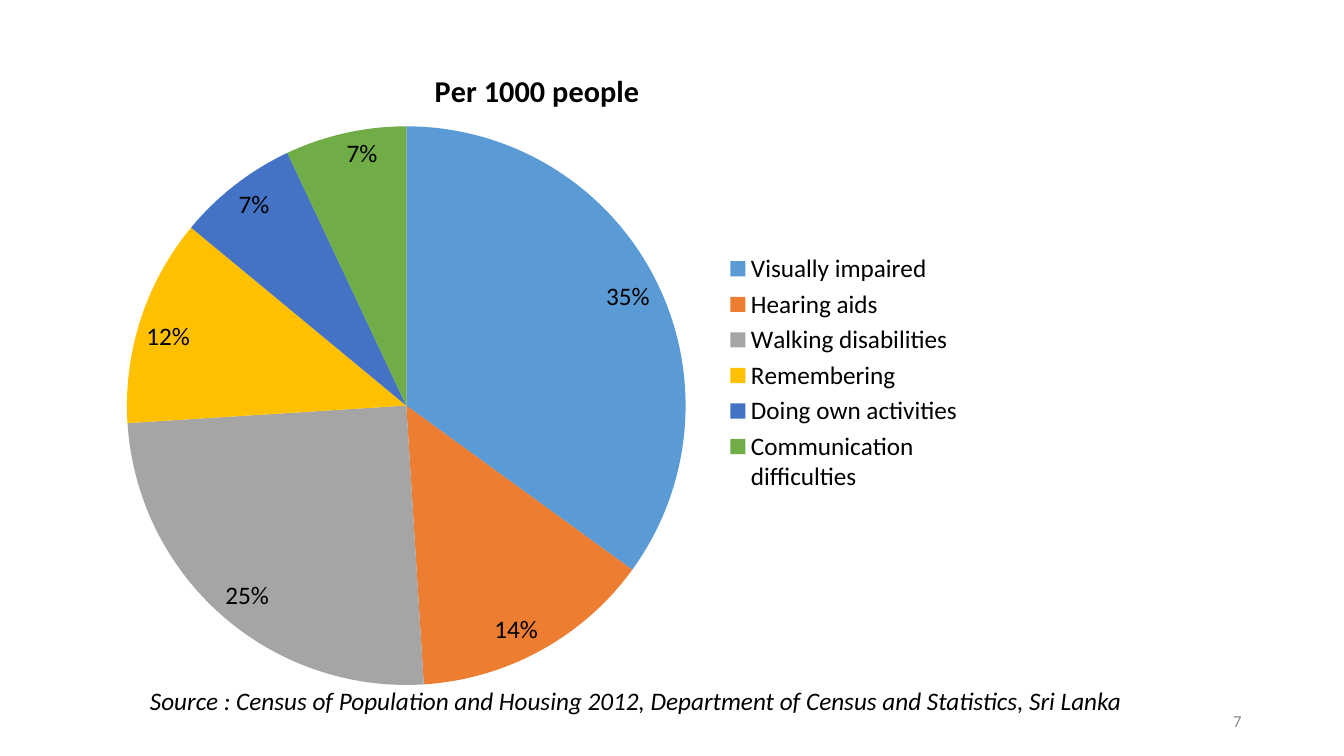
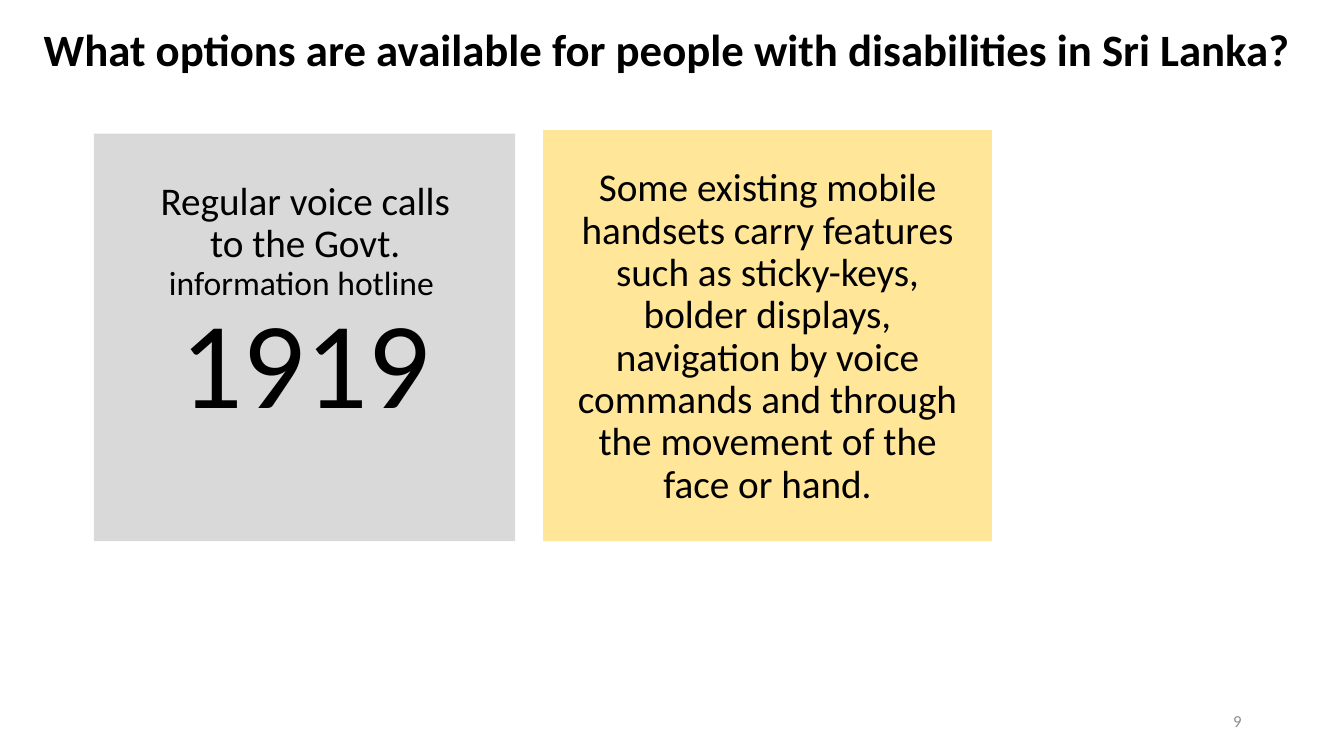
"""Builds two slides on disabilities and support options in Sri Lanka."""
from dataclasses import dataclass

from lxml import etree
from pptx import Presentation
from pptx.chart.data import CategoryChartData
from pptx.dml.color import RGBColor
from pptx.enum import chart as charts, shapes, text
from pptx.oxml import ns
from pptx.util import Pt

FONT = "Calibri"
BLACK = RGBColor(0x00, 0x00, 0x00)
NUMBER_GREY = RGBColor(0x8C, 0x8C, 0x8C)
PANEL_YELLOW = RGBColor(0xFF, 0xE6, 0x99)
PANEL_GREY = RGBColor(0xD9, 0xD9, 0xD9)
LEFT, CENTER, RIGHT = text.PP_ALIGN.LEFT, text.PP_ALIGN.CENTER, text.PP_ALIGN.RIGHT


@dataclass(frozen=True)
class Box:
    """Position and size in points."""
    left: float
    top: float
    width: float
    height: float

    def lengths(self):
        """Return the four lengths as Pt values."""
        return Pt(self.left), Pt(self.top), Pt(self.width), Pt(self.height)


@dataclass(frozen=True)
class Panel:
    """A flat coloured rectangle."""
    box: Box
    color: RGBColor


@dataclass(frozen=True)
class Share:
    """One slice of the pie."""
    category: str
    value: int
    color: RGBColor


SHARES = (
    Share("Visually impaired", 35, RGBColor(0x5B, 0x9B, 0xD5)),
    Share("Hearing aids", 14, RGBColor(0xED, 0x7D, 0x31)),
    Share("Walking disabilities", 25, RGBColor(0xA5, 0xA5, 0xA5)),
    Share("Remembering", 12, RGBColor(0xFF, 0xC0, 0x00)),
    Share("Doing own activities", 7, RGBColor(0x44, 0x72, 0xC4)),
    Share("Communication difficulties", 7, RGBColor(0x70, 0xAD, 0x47)),
)
PANELS = (
    Panel(Box(388, 93, 320.5, 293.5), PANEL_YELLOW),
    Panel(Box(67, 95.5, 301, 291), PANEL_GREY),
)
PIE_AREA = {"x": 0.03, "y": 0.12, "w": 0.64, "h": 0.86}


def style_font(font, size: float, color=BLACK, bold=False, italic=False) -> None:
    """Apply the deck font."""
    font.name, font.size = FONT, Pt(size)
    font.bold, font.italic = bold, italic
    font.color.rgb = color


def place(shape, box: Box) -> None:
    """Move and size a placeholder."""
    shape.left, shape.top, shape.width, shape.height = box.lengths()


def write(shape, words: str, size: float, align=LEFT, anchor=text.MSO_ANCHOR.TOP,
          spacing=1.0, before=0, **style):
    """Fill a shape with one formatted paragraph and return it."""
    frame = shape.text_frame
    frame.text = words
    frame.word_wrap = True
    frame.auto_size = text.MSO_AUTO_SIZE.NONE
    frame.vertical_anchor = anchor
    paragraph = frame.paragraphs[0]
    paragraph.alignment = align
    paragraph.line_spacing = spacing
    paragraph.space_before = Pt(before)
    for run in paragraph.runs:
        style_font(run.font, size, **style)
    return paragraph


def add_text(slide, box: Box, words: str, size: float, **options) -> None:
    """Add a text box with one paragraph."""
    write(slide.shapes.add_textbox(*box.lengths()), words, size, **options)


def add_number(slide, number: int) -> None:
    """Add the slide number at the lower right."""
    add_text(slide, Box(678, 500.5, 216, 29), str(number), 12, align=RIGHT,
             anchor=text.MSO_ANCHOR.MIDDLE, color=NUMBER_GREY)


def add_panel(slide, panel: Panel) -> None:
    """Draw a borderless panel."""
    shape = slide.shapes.add_shape(shapes.MSO_SHAPE.RECTANGLE, *panel.box.lengths())
    shape.shadow.inherit = False
    shape.fill.solid()
    shape.fill.fore_color.rgb = panel.color
    shape.line.fill.background()


def fix_plot_area(chart) -> None:
    """Give the pie a fixed inner layout."""
    area = chart.element.find(".//" + ns.qn("c:plotArea"))
    for old in area.findall(ns.qn("c:layout")):
        area.remove(old)
    layout = etree.Element(ns.qn("c:layout"))
    area.insert(0, layout)
    manual = etree.SubElement(layout, ns.qn("c:manualLayout"))
    settings = {"layoutTarget": "inner", "xMode": "edge", "yMode": "edge", **PIE_AREA}
    for tag, value in settings.items():
        etree.SubElement(manual, ns.qn(f"c:{tag}")).set("val", str(value))


def add_pie(slide, box: Box) -> None:
    """Add the pie chart with its title, labels and legend."""
    figures = CategoryChartData()
    figures.categories = [share.category for share in SHARES]
    figures.add_series("Series 1", [share.value for share in SHARES])
    chart = slide.shapes.add_chart(charts.XL_CHART_TYPE.PIE, *box.lengths(), figures).chart
    style_font(chart.font, 18)

    chart.has_title = True
    heading = chart.chart_title.text_frame
    heading.text = "Per 1000 people"
    style_font(heading.paragraphs[0].runs[0].font, 21.6, bold=True)
    chart.chart_title.include_in_layout = False

    chart.has_legend = True
    chart.legend.position = charts.XL_LEGEND_POSITION.RIGHT
    chart.legend.include_in_layout = False
    style_font(chart.legend.font, 18)

    plot = chart.plots[0]
    plot.vary_by_categories = True
    plot.has_data_labels = True
    labels = plot.data_labels
    labels.show_percentage, labels.show_value = True, False
    labels.number_format, labels.number_format_is_linked = "0%", False
    labels.position = charts.XL_LABEL_POSITION.INSIDE_END
    style_font(labels.font, 18)
    for index, share in enumerate(SHARES):
        fill = plot.series[0].points[index].format.fill
        fill.solid()
        fill.fore_color.rgb = share.color
    fix_plot_area(chart)


def write_hotline(body) -> None:
    """Fill the body placeholder with the hotline text."""
    paragraph = write(body, "Regular voice calls to the Govt. ", 28, align=CENTER,
                      spacing=0.9, before=10)
    service = paragraph.add_run()
    service.text = "information hotline "
    style_font(service.font, 24)
    paragraph.add_line_break()
    line_break = paragraph._p.find(ns.qn("a:br"))
    etree.SubElement(line_break, ns.qn("a:rPr")).set("sz", "2400")
    phone = paragraph.add_run()
    phone.text = "1919"
    style_font(phone.font, 88)
    properties = paragraph._p.get_or_add_pPr()
    properties.set("marL", "0")
    properties.set("indent", "0")
    etree.SubElement(properties, ns.qn("a:buNone"))


def build_census(deck) -> None:
    """Build the slide with the census pie."""
    slide = deck.slides.add_slide(deck.slide_layouts[6])
    add_pie(slide, Box(72, 32.4, 623.5, 468))
    add_number(slide, 7)
    add_text(slide, Box(100, 486, 755, 29),
             "Source : Census of Population and Housing 2012, "
             "Department of Census and Statistics, Sri Lanka", 18, italic=True)


def build_options(deck) -> None:
    """Build the slide with the available options."""
    slide = deck.slides.add_slide(deck.slide_layouts[1])
    title, body = slide.placeholders
    for panel in PANELS:
        add_panel(slide, panel)
    for holder in (title, body):
        slide.shapes._spTree.append(holder.element)
    place(title, Box(24, 13, 923, 48))
    write(title, "What options are available for people with disabilities in Sri Lanka?",
          32, anchor=text.MSO_ANCHOR.MIDDLE, spacing=0.9, bold=True)
    place(body, Box(104.5, 126, 227, 343))
    write_hotline(body)
    add_text(slide, Box(404.5, 116.5, 287.5, 247),
             "Some existing mobile handsets carry features such as sticky-keys, "
             "bolder displays, navigation by voice commands and through the movement "
             "of the face or hand.", 28, align=CENTER, spacing=0.9, before=10)
    add_number(slide, 9)


def main() -> None:
    """Build and save the deck."""
    deck = Presentation()
    deck.slide_width, deck.slide_height = Pt(960), Pt(540)
    build_census(deck)
    build_options(deck)
    deck.save("out.pptx")


if __name__ == "__main__":
    main()
